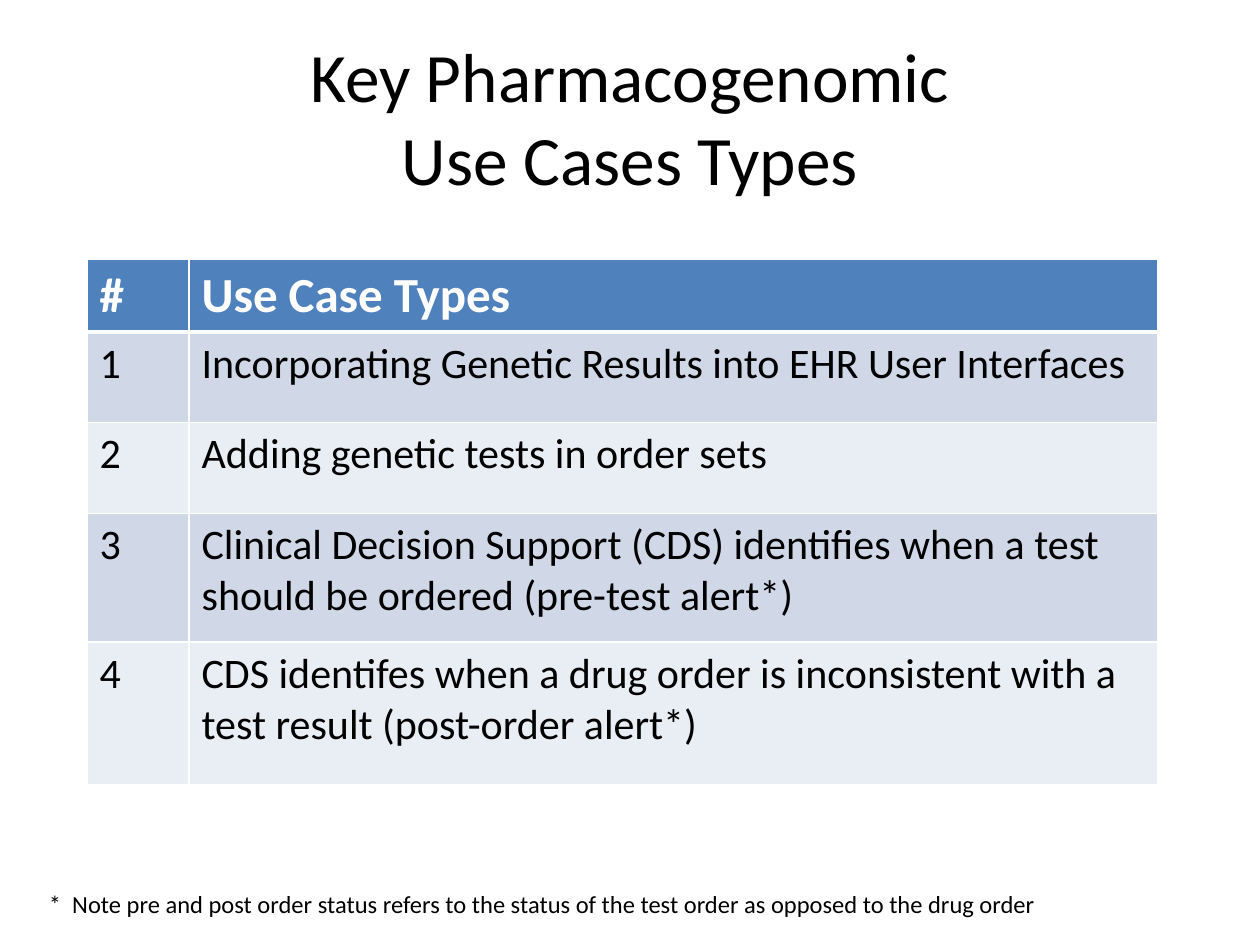
import dataclasses

import lxml.etree
import pptx
import pptx.dml.color
import pptx.enum.text
import pptx.oxml.ns
import pptx.util

Inches = pptx.util.Inches
FONT = "Calibri"
COLORS = {
    "text": "000000",
    "white": "FFFFFF",
    "head": "4F81BD",
    "odd": "D0D8E8",
    "even": "E9EDF4",
}


@dataclasses.dataclass
class Row:
    mark: str
    label: str
    height: float


ROWS = [
    Row("#", "Use Case Types", 0.57),
    Row("1", "Incorporating Genetic Results into EHR User Interfaces", 0.72),
    Row("2", "Adding genetic tests in order sets", 0.72),
    Row("3", "Clinical Decision Support (CDS) identifies when a test "
        "should be ordered (pre-test alert*)", 1.02),
    Row("4", "CDS identifes when a drug order is inconsistent with a "
        "test result (post-order alert*)", 1.13),
]
WIDTHS = [0.81, 7.69]


def add_run(para, text: str, size: float, color: str = "text",
            bold: bool = False) -> None:
    run = para.add_run()
    run.text = text
    run.font.name = FONT
    run.font.size = pptx.util.Pt(size)
    run.font.bold = bold
    run.font.color.rgb = pptx.dml.color.RGBColor.from_string(COLORS[color])


def add_edges(cell, widths: dict[str, float]) -> None:
    props = cell._tc.get_or_add_tcPr()
    qn = pptx.oxml.ns.qn
    for side, width in widths.items():
        line = lxml.etree.SubElement(
            props, qn(f"a:ln{side}"), w=str(int(pptx.util.Pt(width))))
        fill = lxml.etree.SubElement(line, qn("a:solidFill"))
        lxml.etree.SubElement(fill, qn("a:srgbClr"), val=COLORS["white"])


def fill_cell(cell, text: str, index: int) -> None:
    head = index == 0
    add_edges(cell, {"L": 1, "R": 1, "T": 3 if index == 1 else 1,
                     "B": 3 if head else 1})
    shade = "head" if head else ("odd" if index % 2 else "even")
    cell.fill.solid()
    cell.fill.fore_color.rgb = pptx.dml.color.RGBColor.from_string(COLORS[shade])
    add_run(cell.text_frame.paragraphs[0], text, 28 if head else 24,
            "white" if head else "text", head)


def add_title(slide) -> None:
    title = slide.shapes.title
    title.left, title.top = Inches(0.5), Inches(0.3)
    title.width, title.height = Inches(9), Inches(1.25)
    title.text_frame.vertical_anchor = pptx.enum.text.MSO_ANCHOR.MIDDLE
    para = title.text_frame.paragraphs[0]
    para.alignment = pptx.enum.text.PP_ALIGN.CENTER
    add_run(para, "Key Pharmacogenomic", 39.6)
    para.add_line_break()
    add_run(para, "Use Cases Types", 39.6)


def add_cases(slide) -> None:
    height = sum(row.height for row in ROWS)
    table = slide.shapes.add_table(
        len(ROWS), len(WIDTHS), Inches(0.69), Inches(2.06),
        Inches(sum(WIDTHS)), Inches(height)).table
    for column, width in zip(table.columns, WIDTHS):
        column.width = Inches(width)
    for index, row in enumerate(ROWS):
        table.rows[index].height = Inches(row.height)
        for column, text in enumerate((row.mark, row.label)):
            fill_cell(table.cell(index, column), text, index)


def add_note(slide) -> None:
    box = slide.shapes.add_textbox(
        Inches(0.29), Inches(7.01), Inches(8.1), Inches(0.34))
    frame = box.text_frame
    frame.word_wrap = False
    frame.auto_size = pptx.enum.text.MSO_AUTO_SIZE.SHAPE_TO_FIT_TEXT
    add_run(frame.paragraphs[0],
            "*  Note pre and post order status refers to the status of the "
            "test order as opposed to the drug order", 14)


def main() -> None:
    deck = pptx.Presentation()
    deck.slide_width, deck.slide_height = Inches(10), Inches(7.5)
    slide = deck.slides.add_slide(deck.slide_layouts[5])
    add_title(slide)
    add_cases(slide)
    add_note(slide)
    deck.save("out.pptx")


if __name__ == "__main__":
    main()
